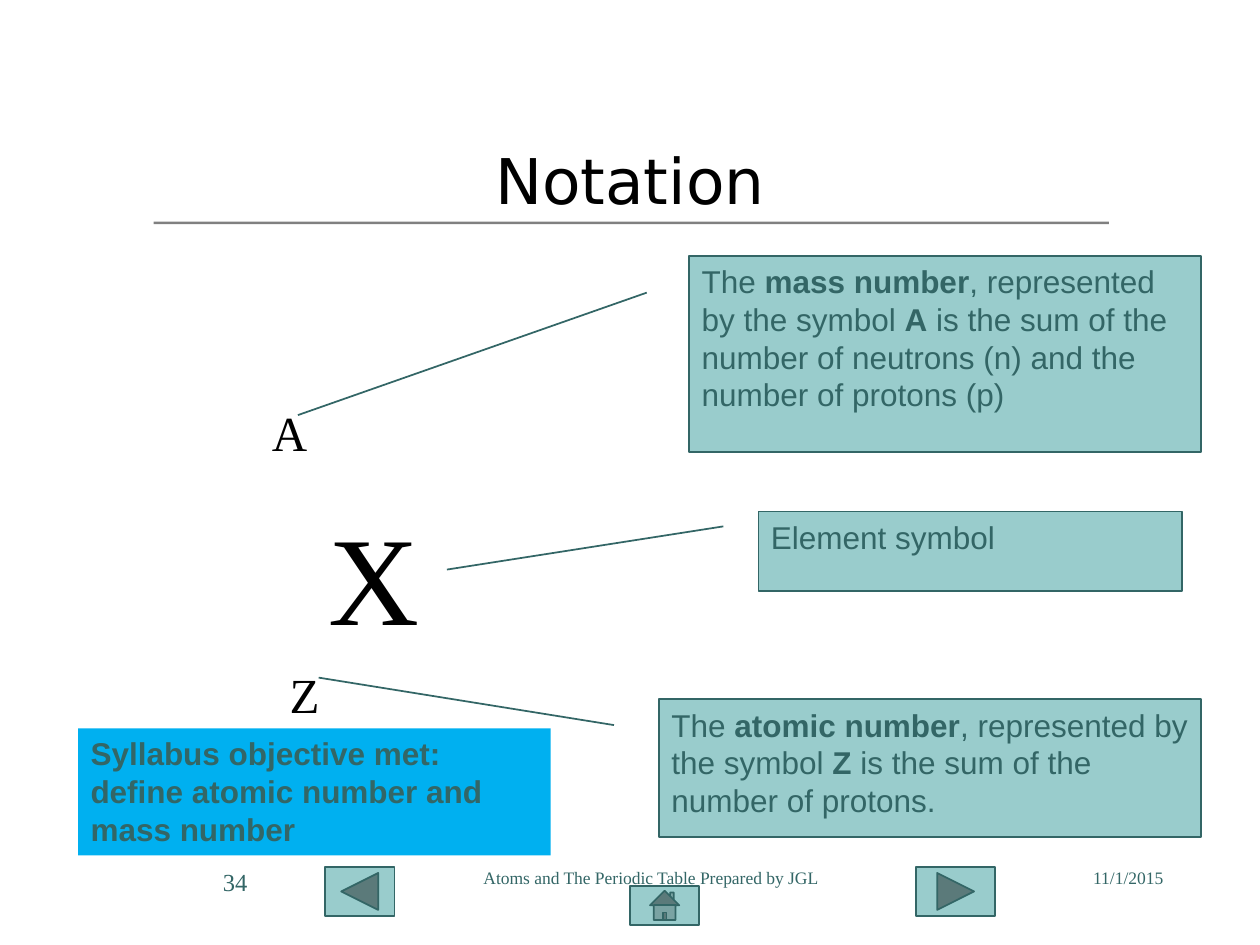
import pptx
import pptx.util
import pptx.dml.color
import pptx.enum.shapes
import pptx.enum.text

Inches, Pt = pptx.util.Inches, pptx.util.Pt
SHAPE = pptx.enum.shapes.MSO_SHAPE
ALIGN = pptx.enum.text.PP_ALIGN
ANCHOR = pptx.enum.text.MSO_ANCHOR
COLORS = {"teal": "336666", "pale": "99CCCC", "blue": "00B0F0",
          "rule": "808080", "black": "000000"}
SERIF, SANS, TITLE = "Times New Roman", "Arial", "DejaVu Sans"


def rgb(name):
    return pptx.dml.color.RGBColor.from_string(COLORS[name])


def add_box(s, kind, box, fill, line=None):
    sp = s.shapes.add_shape(kind, *map(Inches, box))
    sp.shadow.inherit = False
    sp.fill.solid()
    sp.fill.fore_color.rgb = rgb(fill)
    if line:
        sp.line.color.rgb = rgb(line)
        sp.line.width = Pt(1)
    else:
        sp.line.fill.background()
    return sp


def format_run(r, size, font, color, bold=False):
    r.font.size, r.font.name, r.font.bold = Pt(size), font, bold
    r.font.color.rgb = rgb(color)


def add_text(s, box, text, size, font, color, align=ALIGN.LEFT, anchor=ANCHOR.TOP):
    tf = s.shapes.add_textbox(*map(Inches, box)).text_frame
    tf.word_wrap = True
    tf.vertical_anchor = anchor
    p = tf.paragraphs[0]
    p.text, p.alignment = text, align
    format_run(p.runs[0], size, font, color)


def add_header(s, box):
    x, y, w, h = box
    add_box(s, SHAPE.RECTANGLE, (x + 1.22, y + 0.84, 7.58, 0.02), "rule")
    add_text(s, box, "Notation", 36, TITLE, "black", ALIGN.CENTER, ANCHOR.MIDDLE)


def add_symbol(s, box):
    """Nuclide notation: mass number, element, atomic number."""
    tf = s.shapes.add_textbox(*map(Inches, box)).text_frame
    tf.word_wrap = True
    tf.vertical_anchor = ANCHOR.MIDDLE
    tf.margin_top = Inches(0.15)
    tf.text = "A\nX\nZ"
    rows = [(28, 1.51, 0), (72, 0, 22), (28, 1.65, 7.5)]
    for p, (size, indent, before) in zip(tf.paragraphs, rows):
        format_run(p.runs[0], size, SERIF, "black")
        p.space_before = Pt(before)
        if indent:
            p._p.get_or_add_pPr().set("marL", str(Inches(indent)))
        else:
            p.alignment = ALIGN.CENTER


def add_callout(s, box, pointer, parts):
    """Callout whose parts alternate between plain and bold text."""
    sp = add_box(s, SHAPE.LINE_CALLOUT_1, box, "pale", "teal")
    for i, value in enumerate((0.188, -0.083) + pointer):
        sp.adjustments[i] = value
    tf = sp.text_frame
    tf.word_wrap = True
    tf.vertical_anchor = ANCHOR.TOP
    p = tf.paragraphs[0]
    p.alignment = ALIGN.LEFT
    for i, text in enumerate(parts):
        r = p.add_run()
        r.text = text
        format_run(r, 18, SANS, "teal", i % 2 == 1)


def add_objective(s, box):
    tf = add_box(s, SHAPE.RECTANGLE, box, "blue").text_frame
    tf.word_wrap = True
    tf.vertical_anchor = ANCHOR.TOP
    tf.text = "Syllabus objective met:\ndefine atomic number and mass number"
    for p in tf.paragraphs:
        p.alignment = ALIGN.LEFT
        format_run(p.runs[0], 18, SANS, "teal", True)


def add_footer(s, box):
    x, y, w, h = box
    # Navigation buttons
    for kind, dx, dy, bw, bh in [
            (SHAPE.ACTION_BUTTON_BACK_OR_PREVIOUS, 0.91, 0.05, 0.55, 0.39),
            (SHAPE.ACTION_BUTTON_FORWARD_OR_NEXT, 5.6, 0.05, 0.63, 0.39),
            (SHAPE.ACTION_BUTTON_HOME, 3.33, 0.2, 0.55, 0.31)]:
        add_box(s, kind, (x + dx, y + dy, bw, bh), "pale", "teal")
    # Date, slide number and footer text
    for dx, tw, text, size, align in [
            (5.58, 2.08, "11/1/2015", 10, ALIGN.RIGHT),
            (0, 1.42, "34", 14, ALIGN.LEFT),
            (1.91, 3.17, "Atoms and The Periodic Table Prepared by JGL", 10, ALIGN.CENTER)]:
        add_text(s, (x + dx, y, tw, h), text, size, SERIF, "teal", align)


def main():
    prs = pptx.Presentation()
    prs.slide_width, prs.slide_height = Inches(10), Inches(7.5)
    s = prs.slides.add_slide(prs.slide_layouts[6])
    add_header(s, (0, 0.92, 10, 1))
    add_footer(s, (1.67, 6.83, 7.66, 0.5))
    add_symbol(s, (0.55, 2.58, 4.83, 3.67))
    # Explanations pointing at A, Z and X
    add_callout(s, (5.47, 2.03, 4.06, 1.56), (0.811, -0.765),
                ["The ", "mass number", ", represented by the symbol ", "A",
                 " is the sum of the number of neutrons (n) and the number of protons (p)"])
    add_callout(s, (5.23, 5.55, 4.3, 1.09), (-0.158, -0.628),
                ["The ", "atomic number", ", represented by the symbol ", "Z",
                 " is the sum of the number of protons."])
    add_callout(s, (6.02, 4.06, 3.36, 0.63), (0.732, -0.736), ["Element symbol"])
    add_objective(s, (0.62, 5.78, 3.75, 1.01))
    prs.save("out.pptx")


if __name__ == "__main__":
    main()
